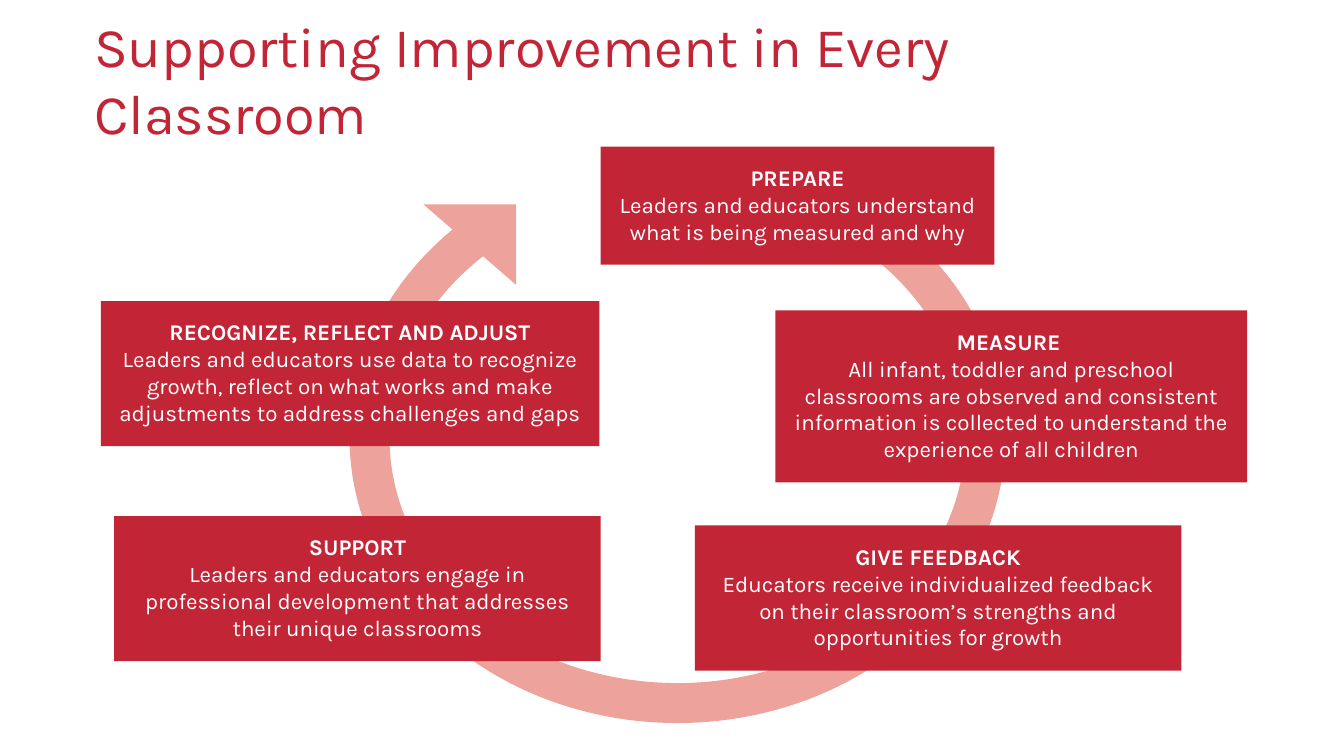
from pptx import Presentation
from pptx.dml.color import RGBColor
from pptx.enum.shapes import MSO_SHAPE
from pptx.enum.text import MSO_ANCHOR, MSO_AUTO_SIZE, PP_ALIGN
from pptx.util import Inches, Pt

COLORS = {"red": "C22536", "pink": "EDA29B", "white": "FFFFFF"}
FONT = "Karla"

# left, top, width, height, heading, description
STEPS = [
    (4.47, 1.09, 2.93, 0.88, "PREPARE",
     "Leaders and educators understand what is being measured and why"),
    (0.85, 3.84, 3.62, 1.08, "SUPPORT",
     "Leaders and educators engage in professional development that addresses "
     "their unique classrooms"),
    (5.17, 3.91, 3.62, 1.08, "GIVE FEEDBACK",
     "Educators receive individualized feedback on their classroom’s strengths "
     "and opportunities for growth"),
    (0.75, 2.24, 3.71, 1.08, "RECOGNIZE, REFLECT AND ADJUST",
     "Leaders and educators use data to recognize growth, reflect on what works "
     "and make adjustments to address challenges and gaps"),
    (5.77, 2.31, 3.51, 1.28, "MEASURE ",
     "All infant, toddler and preschool classrooms are observed and consistent "
     "information is collected to understand the experience of all children"),
]


def add_filled_shape(kind, left, top, width, height, color):
    shape = slide.shapes.add_shape(
        kind, Inches(left), Inches(top), Inches(width), Inches(height))
    shape.shadow.inherit = False
    shape.fill.solid()
    shape.fill.fore_color.rgb = RGBColor.from_string(COLORS[color])
    shape.line.fill.background()
    return shape


def add_run(paragraph, text, size, color, bold=False):
    run = paragraph.add_run()
    run.text = text
    run.font.name = FONT
    run.font.size = Pt(size)
    run.font.bold = bold
    run.font.color.rgb = RGBColor.from_string(COLORS[color])


presentation = Presentation()
presentation.slide_width = Inches(10)
presentation.slide_height = Inches(10) * 9 // 16
slide = presentation.slides.add_slide(presentation.slide_layouts[6])

# Title
title = slide.shapes.add_textbox(Inches(0.62), Inches(0.04), Inches(8.62), Inches(1.09))
title_frame = title.text_frame
title_frame.word_wrap = True
title_frame.vertical_anchor = MSO_ANCHOR.MIDDLE
title_frame.margin_left = title_frame.margin_right = Inches(0.08)
title_frame.margin_top = title_frame.margin_bottom = Inches(0.04)
add_run(title_frame.paragraphs[0], "Supporting Improvement in Every Classroom", 30, "red")

# Cycle arrow: angles are in 60000ths of a degree, adjustments in 100000ths
cycle_arc = add_filled_shape(MSO_SHAPE.BLOCK_ARC, 2.6, 1.13, 4.88, 4.25, "pink")
cycle_arc.rotation = 180
for index, value in enumerate((90 * 0.6, 50.2 * 0.6, 0.07)):
    cycle_arc.adjustments[index] = value
arrow_tip = add_filled_shape(MSO_SHAPE.RIGHT_TRIANGLE, 3.15, 1.52, 0.69, 0.6, "pink")
arrow_tip.rotation = 180

# Steps of the cycle
for left, top, width, height, heading, description in STEPS:
    box = add_filled_shape(MSO_SHAPE.RECTANGLE, left, top, width, height, "red")
    frame = box.text_frame
    frame.word_wrap = True
    frame.auto_size = MSO_AUTO_SIZE.SHAPE_TO_FIT_TEXT
    frame.vertical_anchor = MSO_ANCHOR.TOP
    frame.margin_left = frame.margin_right = Inches(0.13)
    frame.margin_top = frame.margin_bottom = Inches(0.13)
    heading_paragraph = frame.paragraphs[0]
    description_paragraph = frame.add_paragraph()
    add_run(heading_paragraph, heading, 12, "white", bold=True)
    add_run(description_paragraph, description, 12, "white")
    for paragraph in frame.paragraphs:
        paragraph.alignment = PP_ALIGN.CENTER

presentation.save("out.pptx")
